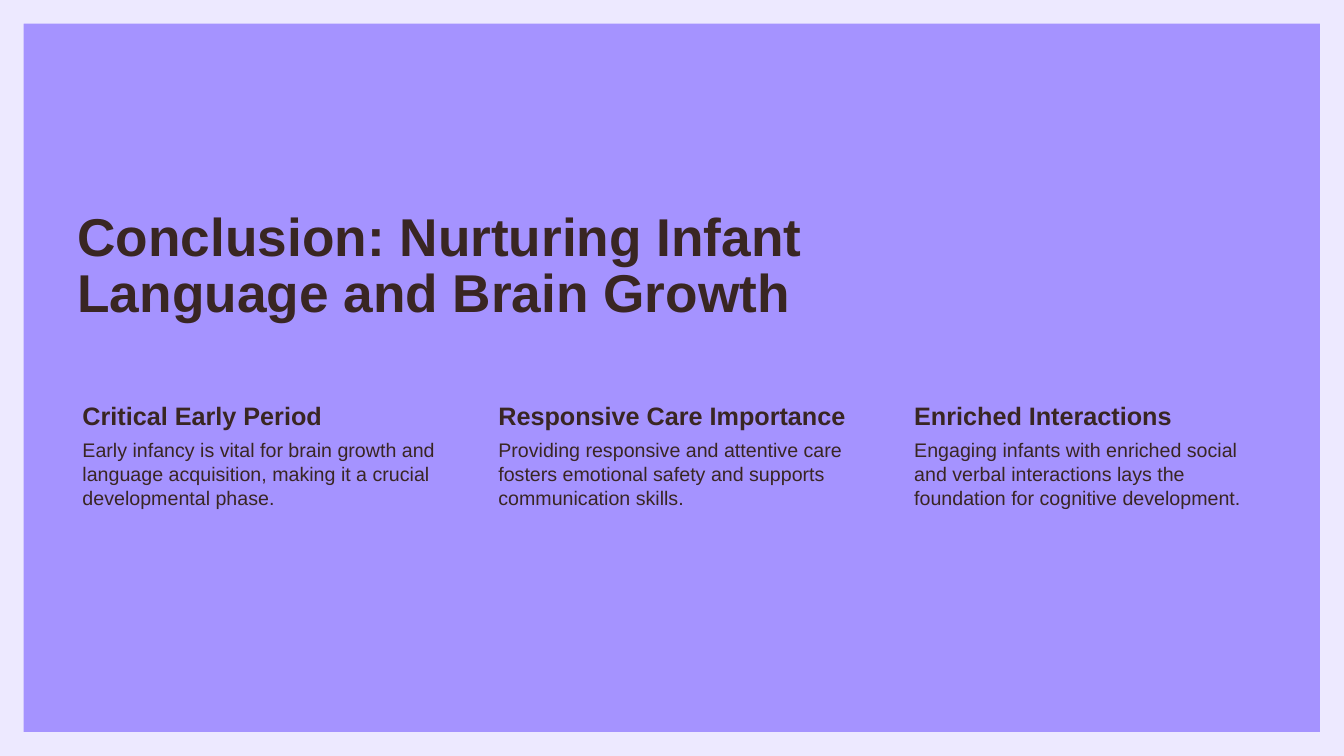
"""Build the closing slide on infant language and brain growth."""
from pptx import Presentation
from pptx.dml.color import RGBColor
from pptx.enum import shapes, text
from pptx.util import Cm, Pt

TITLE = "Conclusion: Nurturing Infant Language and Brain Growth"
POINTS = [
    ("Critical Early Period",
     "Early infancy is vital for brain growth and language acquisition, "
     "making it a crucial developmental phase."),
    ("Responsive Care Importance",
     "Providing responsive and attentive care fosters emotional safety "
     "and supports communication skills."),
    ("Enriched Interactions",
     "Engaging infants with enriched social and verbal interactions lays "
     "the foundation for cognitive development."),
]
BACK, EDGE, INK = "A593FF", "EDE9FF", "392623"
WIDE, HIGH, RIM = 33.87, 19.05, 0.6
LEFT, COL, STEP = 1.7, 9.52, 10.48
HEAD = dict(top=9.98, high=0.94, pad=0.08, size=18, bold=True)
BODY = dict(top=10.95, high=6.5, pad=0.05, size=14, bold=False)


def paint(fill, tone):
    fill.solid()
    fill.fore_color.rgb = RGBColor.from_string(tone)


def put(obj, values):
    for name, value in values.items():
        setattr(obj, name, value)


def write(frame, words, size, bold, gap):
    frame.text = words
    line = frame.paragraphs[0]
    put(line, dict(alignment=text.PP_ALIGN.LEFT, line_spacing=gap))
    put(line.font, dict(name="Arial", size=Pt(size), bold=bold))
    paint(line.font.fill, INK)


def add_text(group, left, words, form):
    box = group.shapes.add_textbox(
        Cm(left), Cm(form["top"]), Cm(COL), Cm(form["high"]))
    pad = Cm(form["pad"])
    put(box.text_frame, dict(
        word_wrap=True, margin_left=Cm(0.38), margin_right=pad,
        margin_top=pad, margin_bottom=pad))
    write(box.text_frame, words, form["size"], form["bold"], 1.04)


def main():
    deck = Presentation()
    put(deck, dict(slide_width=Cm(WIDE), slide_height=Cm(HIGH)))
    slide = deck.slides.add_slide(deck.slide_layouts[5])
    paint(slide.background.fill, BACK)

    title = slide.shapes.title
    put(title, dict(left=Cm(LEFT), top=Cm(5.13),
                    width=Cm(20.4), height=Cm(3.15)))
    put(title.text_frame, dict(
        word_wrap=True, auto_size=text.MSO_AUTO_SIZE.NONE,
        vertical_anchor=text.MSO_ANCHOR.BOTTOM))
    write(title.text_frame, TITLE, 38, True, 0.88)

    rim = slide.shapes.add_shape(
        shapes.MSO_SHAPE.FRAME, 0, 0, Cm(WIDE), Cm(HIGH))
    rim.adjustments[0] = RIM / HIGH
    rim.shadow.inherit = False
    paint(rim.fill, EDGE)
    rim.line.fill.background()

    group = slide.shapes.add_group_shape()
    for i, (head, body) in enumerate(POINTS):
        left = LEFT + i * STEP
        add_text(group, left, head, HEAD)
        add_text(group, left, body, BODY)
    deck.save("out.pptx")


if __name__ == "__main__":
    main()
